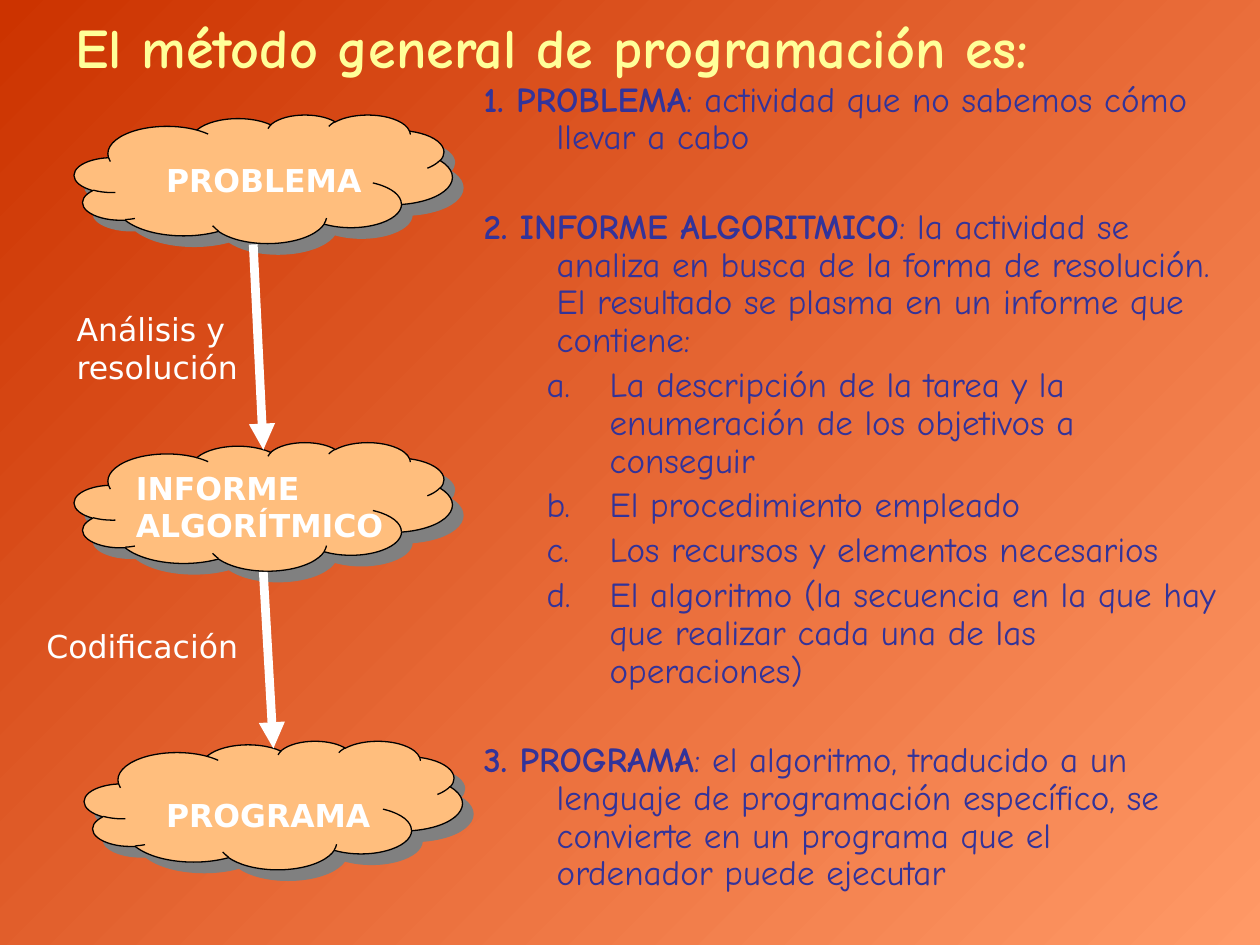
from dataclasses import dataclass

from lxml.etree import SubElement
from pptx import Presentation
from pptx.dml.color import RGBColor
from pptx.enum.shapes import MSO_CONNECTOR as Connector, MSO_SHAPE as Shape
from pptx.enum.text import MSO_ANCHOR as Anchor
from pptx.oxml.ns import qn
from pptx.slide import Slide
from pptx.util import Inches, Pt

DARK_ORANGE = RGBColor(0xCC, 0x33, 0x00)
LIGHT_ORANGE = RGBColor(0xFF, 0x99, 0x66)
PEACH = RGBColor(0xFF, 0xBE, 0x7D)
YELLOW = RGBColor(0xFF, 0xFF, 0x99)
INDIGO = RGBColor(0x33, 0x33, 0x99)
GRAY = RGBColor(0x80, 0x80, 0x80)
WHITE = RGBColor(0xFF, 0xFF, 0xFF)
BLACK = RGBColor(0x00, 0x00, 0x00)

CLOUD_SIZE = (30, 10.2)
SECTION_GAP = 29.5

STAGES = [
    ("PROBLEMA", (5.9, 9.1), (12.2, 12.3, 22, 4)),
    ("INFORME ALGORÍTMICO", (5.9, 35.1), (9.8, 36.7, 23.6, 7)),
    ("PROGRAMA", (6.7, 58.8), (12.2, 62.7, 22, 4)),
]
STEPS = [
    ("Análisis y resolución", (5.1, 24.1, 14.9, 7), (20.1, 19.4), (20.9, 35.7)),
    ("Codificación", (2.7, 49.3, 17.3, 4), (20.9, 45.4), (21.7, 59.4)),
]
DEFINITIONS = [
    ("1. PROBLEMA", ": actividad que no sabemos cómo llevar a cabo", []),
    (
        "2. INFORME ALGORITMICO",
        ": la actividad se analiza en busca de la forma de resolución. "
        "El resultado se plasma en un informe que contiene:",
        [
            "La descripción de la tarea y la enumeración de los objetivos a conseguir",
            "El procedimiento empleado",
            "Los recursos y elementos necesarios",
            "El algoritmo (la secuencia en la que hay que realizar cada una de las operaciones)",
        ],
    ),
    (
        "3. PROGRAMA",
        ": el algoritmo, traducido a un lenguaje de programación específico, "
        "se convierte en un programa que el ordenador puede ejecutar",
        [],
    ),
]


@dataclass
class MethodSlide:
    """Draws on one slide with a shared style, measured in grid cells."""

    slide: Slide
    cell: int = Inches(0.1)
    hand_font: str = "Comic Neue"
    label_font: str = "DejaVu Sans"

    def cells(self, *counts):
        return [round(count * self.cell) for count in counts]

    def background(self, start, end):
        fill = self.slide.background.fill
        fill.gradient()
        fill.gradient_angle = 315
        for stop, color, position in zip(fill.gradient_stops, (start, end), (0, 1)):
            stop.color.rgb = color
            stop.position = position

    def style(self, paragraph, name, size, color, bold=None):
        font = paragraph.font
        font.name, font.size, font.bold = name, Pt(size), bold
        font.color.rgb = color

    def frame(self, area):
        frame = self.slide.shapes.add_textbox(*self.cells(*area)).text_frame
        frame.word_wrap = True
        return frame

    def title(self, text, area):
        frame = self.frame(area)
        frame.vertical_anchor = Anchor.BOTTOM
        frame.text = text
        self.style(frame.paragraphs[0], self.hand_font, 32, YELLOW, True)

    def label(self, text, area, bold=False):
        frame = self.frame(area)
        frame.text = text
        self.style(frame.paragraphs[0], self.label_font, 18, WHITE, bold)

    def cloud(self, corner):
        cloud = self.slide.shapes.add_shape(Shape.CLOUD, *self.cells(*corner, *CLOUD_SIZE))
        cloud.fill.solid()
        cloud.fill.fore_color.rgb = PEACH
        cloud.line.color.rgb = BLACK
        cloud.line.width = Pt(0.75)
        cloud.shadow.inherit = False
        effects = cloud._element.spPr.find(qn("a:effectLst"))
        shadow = SubElement(effects, qn("a:outerShdw"), dist=str(Pt(8.5)),
                            dir=str(45 * 60000), algn="ctr", rotWithShape="0")
        SubElement(shadow, qn("a:srgbClr"), val=str(GRAY))

    def arrow(self, start, end):
        arrow = self.slide.shapes.add_connector(
            Connector.STRAIGHT, *self.cells(*start, *end))
        arrow.line.color.rgb = WHITE
        arrow.line.width = Pt(5)
        SubElement(arrow.line._get_or_add_ln(), qn("a:tailEnd"), type="triangle")
        SubElement(arrow._element.spPr, qn("a:effectLst"))

    def entry(self, paragraph, margin, hanging, gap, numbered=False):
        properties = paragraph._p.get_or_add_pPr()
        properties.set("marL", str(Inches(margin)))
        properties.set("indent", str(-Inches(hanging)))
        if numbered:
            SubElement(properties, qn("a:buAutoNum"), type="alphaLcPeriod")
        paragraph.line_spacing = 0.9
        paragraph.space_before = Pt(gap)
        self.style(paragraph, self.hand_font, 20, INDIGO)

    def definitions(self, entries, area):
        frame = self.frame(area)
        for index, (term, meaning, parts) in enumerate(entries):
            paragraph = frame.add_paragraph() if index else frame.paragraphs[0]
            self.entry(paragraph, 0.58, 0.58, SECTION_GAP if index else 0)
            for text, bold in ((term, True), (meaning, False)):
                run = paragraph.add_run()
                run.text, run.font.bold = text, bold
            for part in parts:
                paragraph = frame.add_paragraph()
                paragraph.level = 1
                self.entry(paragraph, 1, 0.5, 4, numbered=True)
                paragraph.add_run().text = part


def main():
    deck = Presentation()
    deck.slide_width, deck.slide_height = Inches(10), Inches(7.5)
    method = MethodSlide(deck.slides.add_slide(deck.slide_layouts[6]))
    method.background(DARK_ORANGE, LIGHT_ORANGE)
    method.title("El método general de programación es:", (5, 1.7, 90, 5.1))
    for name, corner, area in STAGES:
        method.cloud(corner)
        method.label(name, area, bold=True)
    for name, area, start, end in STEPS:
        method.arrow(start, end)
        method.label(name, area)
    method.definitions(DEFINITIONS, (37.4, 6, 60.2, 66.9))
    deck.save("out.pptx")


if __name__ == "__main__":
    main()
